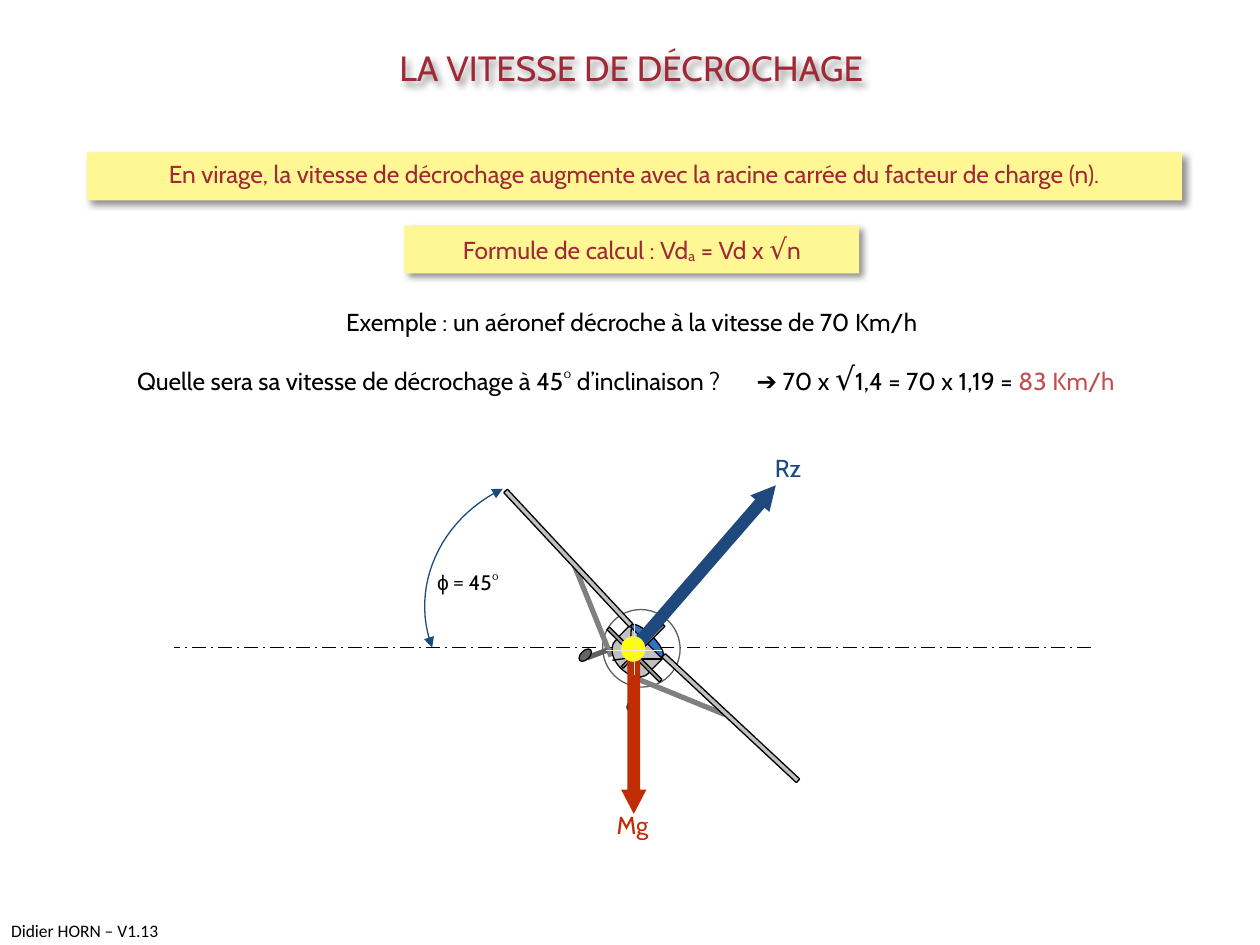
from lxml import etree
from pptx import Presentation, util as u
from pptx.dml.color import RGBColor
from pptx.enum import dml, shapes, text
from pptx.oxml import ns

COLS = {
    "wine": "9F2936", "cream": "FFF793", "black": "000000", "coral": "C0504D",
    "navy": "1F497D", "rust": "C02C04", "sun": "FFFF00", "sand": "E3DED1",
    "pale": "EEECE1", "glass": "3172C4", "skin": "C0C0C0", "tail": "969696",
    "strut": "808080", "gear": "5F5F5F", "tyre": "656565",
}
KIND = shapes.MSO_SHAPE
ALIGN = {"l": text.PP_ALIGN.LEFT, "c": text.PP_ALIGN.CENTER, "r": text.PP_ALIGN.RIGHT}


def paint(name):
    return RGBColor.from_string(COLS[name])


def sub(node, tag, **attrs):
    return etree.SubElement(node, ns.qn(tag), attrs)


def shade(shape):
    """Soft shadow to the lower right."""
    shape.shadow.inherit = False
    fx = shape._element.spPr.find(ns.qn("a:effectLst"))
    drop = sub(fx, "a:outerShdw", blurRad=str(u.Pt(4)), dist=str(u.Pt(3)),
               dir="2700000", algn="tl", rotWithShape="0")
    sub(sub(drop, "a:srgbClr", val=COLS["black"]), "a:alpha", val="43000")


def write(shape, runs, align="c", wrap=True, **base):
    """Fill a shape with runs, each a (text, changes of format) pair."""
    frame = shape.text_frame
    frame.word_wrap = wrap
    frame.vertical_anchor = text.MSO_ANCHOR.TOP
    para = frame.paragraphs[0]
    para.alignment = ALIGN[align]
    form = {"size": 14, "name": "Cabin", "col": "black", **base}
    for words, change in runs:
        form.update(change)
        run = para.add_run()
        run.text = words
        values = {"size": u.Pt(form["size"]), "name": form["name"]}
        for key, value in values.items():
            setattr(run.font, key, value)
        run.font.color.rgb = paint(form["col"])
        if "base" in change:
            run._r.get_or_add_rPr().set("baseline", str(change["base"] * 1000))


def label(slide, box, runs, **form):
    shape = slide.shapes.add_textbox(*map(u.Inches, box))
    write(shape, runs, **form)
    return shape


def trim(line, col, width):
    line.color.rgb = paint(col)
    line.width = u.Pt(width)


def solid(slide, kind, box, fill=None, line=None, width=0.75, rot=0, adj=()):
    shape = slide.shapes.add_shape(kind, *map(u.Inches, box))
    shape.shadow.inherit = False
    shape.rotation = rot
    for i, value in enumerate(adj):
        shape.adjustments[i] = value
    if fill:
        shape.fill.solid()
        shape.fill.fore_color.rgb = paint(fill)
    else:
        shape.fill.background()
    if line:
        trim(shape.line, line, width)
    else:
        shape.line.fill.background()
    return shape


def rule(slide, ends, col, width):
    link = slide.shapes.add_connector(shapes.MSO_CONNECTOR.STRAIGHT, *map(u.Inches, ends))
    trim(link.line, col, width)
    sub(link._element.spPr, "a:effectLst")
    return link


def banner(slide, box, runs):
    shape = solid(slide, KIND.RECTANGLE, box, "cream")
    shade(shape)
    write(shape, runs, col="wine")


def heading(slide, x, y):
    shape = label(slide, (x, y, 5.52, 0.39), [("LA VITESSE DE DÉCROCHAGE", {})],
                  size=20, col="wine")
    shade(shape)


def lesson(slide, x, y):
    """Rule, formula and worked example."""
    banner(slide, (x + 0.3, y, 8.69, 0.38), [
        ("En virage, la vitesse de décrochage augmente avec la racine carrée"
         " du facteur de charge (n).", {})])
    label(slide, (x, y + 1.18, 9.25, 0.34),
          [("Exemple : un aéronef décroche à la vitesse de 70 Km/h", {})])
    label(slide, (x, y + 1.65, 5.43, 0.34),
          [("Quelle sera sa vitesse de décrochage à 45° d’inclinaison ?", {})], align="r")
    banner(slide, (x + 2.82, y + 0.58, 3.61, 0.38), [
        ("Formule de calcul : Vd", {}), ("a", {"base": -9}), (" = Vd x ", {"base": 0}),
        ("√", {"size": 16}), ("n", {"size": 14})])
    label(slide, (x + 5.11, y + 1.59, 3.85, 0.4), [
        ("➔", {"name": "Arial"}), (" 70 x ", {"name": "Cabin"}), ("√", {"size": 18}),
        ("1,4 = 70 x 1,19 =", {"size": 14}), (" 83 Km/h", {"col": "coral"})])


def plane(slide, x, y):
    """Banked aircraft seen from behind, around the point (x, y)."""
    def part(kind, left, top, wide, high, fill, rot=45, line="black"):
        adj = (0.167,) if kind == KIND.ROUNDED_RECTANGLE else ()
        solid(slide, kind, (x + left, y + top, wide, high), fill, line, rot=rot, adj=adj)

    def bar(x1, y1, x2, y2, col="black", width=0.75):
        rule(slide, (x + x1, y + y1, x + x2, y + y2), col, width)

    oval, slab = KIND.OVAL, KIND.ROUNDED_RECTANGLE
    # Propeller disc, struts and right wing
    part(oval, -0.22, -0.16, 0.62, 0.61, None, line="gear")
    bar(-0.15, 0.21, -0.44, -0.51, "strut", 3)
    bar(0.04, 0.38, 0.75, 0.67, "strut", 3)
    part(slab, 0.07, 0.68, 1.46, 0.04, "skin", 43)
    # Cabin and fin
    part(oval, -0.04, 0.03, 0.35, 0.11, "glass")
    part(oval, -0.17, 0.09, 0.37, 0.25, "skin")
    part(KIND.RECTANGLE, -0.1, 0.08, 0.37, 0.12, "skin")
    part(slab, -0.13, 0.12, 0.47, 0.02, "tail", 315)
    bar(0.01, 0.22, -0.14, 0.24)
    bar(0.03, 0.23, 0, 0.37)
    # Landing gear
    bar(-0.18, 0.16, -0.34, 0.22, "gear", 3)
    bar(0.06, 0.4, 0, 0.56, "gear", 3)
    part(oval, -0.01, 0.53, 0.07, 0.12, "tyre")
    bar(0, 0.18, 0.01, -0.01)
    bar(0.05, 0.23, 0.25, 0.23)
    # Left wing, wheel and tailplane
    part(slab, -1.22, -0.59, 1.46, 0.04, "skin", 47)
    part(oval, -0.39, 0.14, 0.07, 0.12, "tyre")
    part(slab, -0.26, 0.18, 0.59, 0.03, "tail")


def angle(slide, x, y):
    """Bank angle: a Bezier arc rising from (x, y), with its value."""
    ctrl = ((0, 0), (-0.18, -0.48), (0.06, -1.02), (0.56, -1.26))
    steps = 24
    dots = []
    for i in range(steps + 1):
        t = i / steps
        mix = ((1 - t) ** 3, 3 * t * (1 - t) ** 2, 3 * t * t * (1 - t), t ** 3)
        dots.append((u.Inches(x + sum(m * c[0] for m, c in zip(mix, ctrl))),
                     u.Inches(y + sum(m * c[1] for m, c in zip(mix, ctrl)))))
    pen = slide.shapes.build_freeform(*dots[0], scale=1.0)
    pen.add_line_segments(dots[1:], close=False)
    arc = pen.convert_to_shape()
    arc.shadow.inherit = False
    arc.fill.background()
    trim(arc.line, "navy", 0.75)
    for end in ("a:headEnd", "a:tailEnd"):
        sub(arc.line._get_or_add_ln(), end, type="triangle")
    label(slide, (x - 0.06, y - 0.67, 1.25, 0.3), [
        ("ϕ", {"name": "Arial"}), (" = ", {"name": "Calibri"}), ("45°", {"name": "Cabin"})],
        align="l", size=12)


def force(slide, box, rot, col, name, spot):
    solid(slide, KIND.UP_ARROW, box, col, rot=rot, adj=(0.5, 0.964))
    label(slide, spot, [(name, {})], col=col)


def diagram(slide, x, y):
    """Forces in a turn, around the point (x, y)."""
    axis = rule(slide, (x + 3.66, y + 0.14, x - 3.62, y + 0.14), "black", 1)
    axis.line.dash_style = dml.MSO_LINE.LONG_DASH_DOT
    plane(slide, x, y)
    angle(slide, x - 1.57, y + 0.14)
    force(slide, (x + 0.49, y - 1.36, 0.2, 1.73), 41, "navy", "Rz",
          (x + 0.84, y - 1.45, 0.83, 0.34))
    force(slide, (x - 0.07, y + 0.18, 0.2, 1.28), 180, "rust", "Mg",
          (x - 0.8, y + 1.38, 1.64, 0.34))
    # Centre of gravity
    solid(slide, KIND.OVAL, (x - 0.07, y + 0.05, 0.19, 0.2), "sun", "sand", 0.25)
    rule(slide, (x + 0.03, y - 0.05, x + 0.03, y + 0.36), "sand", 0.25)
    rule(slide, (x + 0.25, y + 0.16, x - 0.19, y + 0.16), "pale", 0.25)


def main():
    deck = Presentation()
    deck.slide_width, deck.slide_height = u.Inches(10), u.Inches(7.5)
    slide = deck.slides.add_slide(deck.slide_layouts[6])
    label(slide, (-0.01, 7.25, 1.5, 0.27), [("Didier HORN – V1.13 ©", {})],
          align="l", wrap=False, size=10, name="Calibri")
    heading(slide, 2.25, 0.32)
    lesson(slide, 0.39, 1.21)
    diagram(slide, 5, 5)
    deck.save("out.pptx")


if __name__ == "__main__":
    main()
